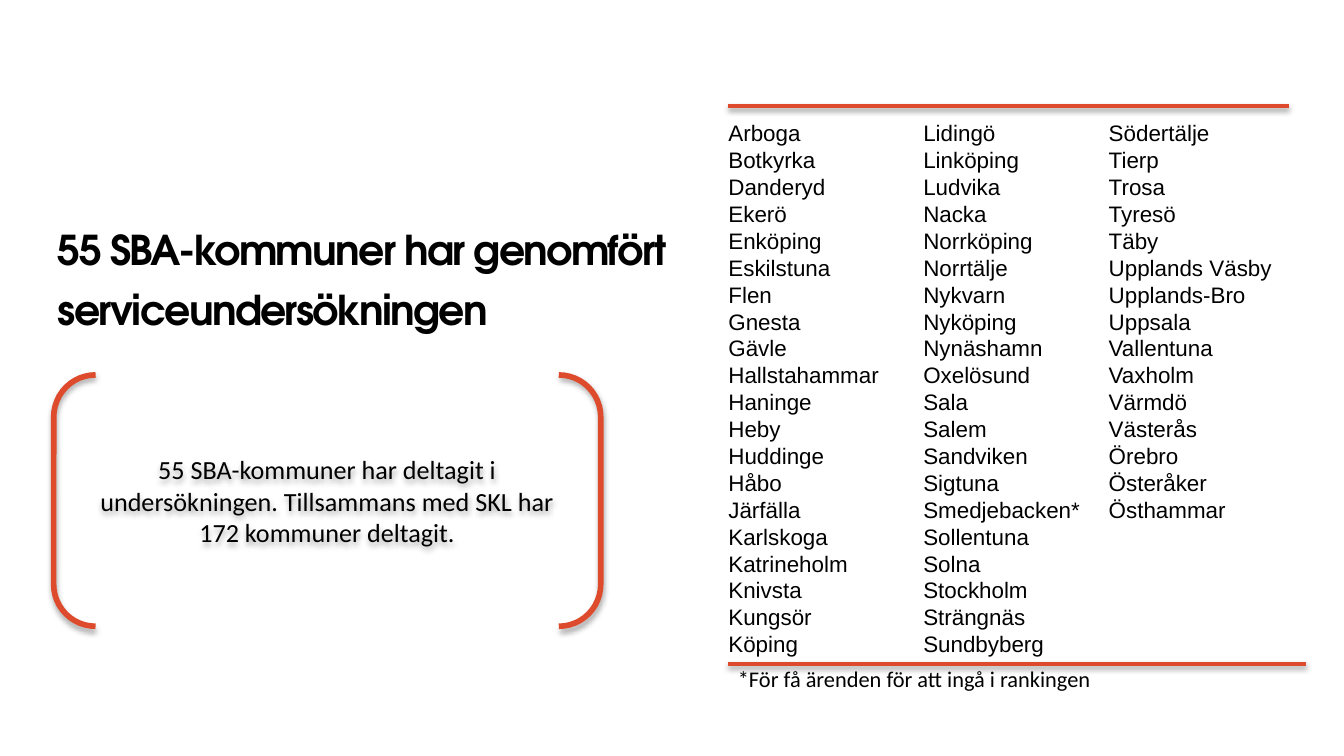
from pptx import Presentation
from pptx.dml.color import RGBColor
from pptx.enum.shapes import MSO_CONNECTOR, MSO_SHAPE
from pptx.enum.text import MSO_ANCHOR, PP_ALIGN
from pptx.oxml import parse_xml
from pptx.oxml.ns import nsdecls
from pptx.util import Inches, Pt

BLACK = "000000"
ORANGE = "DD4A2C"


def style_text(shape, lines, size, font_name, side_margin=0):
    """Fill a shape with one paragraph per line, all in one font."""
    frame = shape.text_frame
    frame.text = "\n".join(lines)
    frame.margin_left = frame.margin_right = Inches(side_margin)
    frame.margin_top = frame.margin_bottom = 0
    for paragraph in frame.paragraphs:
        paragraph.font.size = Pt(size)
        paragraph.font.name = font_name
        paragraph.font.color.rgb = RGBColor.from_string(BLACK)
    return frame


def style_outline(shape, width, distance, opacity):
    """Give a shape an orange outline and a soft shadow straight below."""
    shape.line.color.rgb = RGBColor.from_string(ORANGE)
    shape.line.width = Pt(width)
    shape._element.spPr.append(parse_xml(
        f'<a:effectLst {nsdecls("a")}><a:outerShdw blurRad="{Pt(3.1)}" '
        f'dist="{Pt(distance)}" dir="5400000" rotWithShape="0">'
        f'<a:srgbClr val="{BLACK}"><a:alpha val="{opacity * 1000}"/></a:srgbClr>'
        '</a:outerShdw></a:effectLst>'))


# Widescreen 16:9 page
presentation = Presentation()
presentation.slide_width = Inches(10)
presentation.slide_height = Inches(10 * 9 / 16)
slide = presentation.slides.add_slide(presentation.slide_layouts[6])

# Title
title = slide.shapes.add_textbox(Inches(0.43), Inches(1.59), Inches(4.98), Inches(0.8))
title_frame = style_text(
    title, ["55 SBA-kommuner har genomfört serviceundersökningen"], 22, "TeX Gyre Adventor")
title_frame.word_wrap = True
title_paragraph = title_frame.paragraphs[0]
title_paragraph.line_spacing = Pt(32.1)
title_paragraph.font.bold = True
title_paragraph.runs[0]._r.get_or_add_rPr().set("spc", "-90")

# Municipalities in three columns
columns = [
    (5.42, ["Arboga", "Botkyrka", "Danderyd", "Ekerö", "Enköping", "Eskilstuna", "Flen",
            "Gnesta", "Gävle", "Hallstahammar", "Haninge", "Heby", "Huddinge", "Håbo",
            "Järfälla", "Karlskoga", "Katrineholm", "Knivsta", "Kungsör", "Köping"]),
    (6.87, ["Lidingö", "Linköping", "Ludvika", "Nacka", "Norrköping", "Norrtälje",
            "Nykvarn", "Nyköping", "Nynäshamn", "Oxelösund", "Sala", "Salem", "Sandviken",
            "Sigtuna", "Smedjebacken*", "Sollentuna", "Solna", "Stockholm", "Strängnäs",
            "Sundbyberg"]),
    (8.25, ["Södertälje", "Tierp", "Trosa", "Tyresö", "Täby", "Upplands Väsby",
            "Upplands-Bro", "Uppsala", "Vallentuna", "Vaxholm", "Värmdö", "Västerås",
            "Örebro", "Österåker", "Östhammar"]),
]
for left, names in columns:
    column = slide.shapes.add_textbox(Inches(left), Inches(0.89), Inches(1.6), Inches(3.97))
    style_text(column, names, 12, "Arial").word_wrap = False

# Rules above and below the columns
for right, top in [(9.59, 0.79), (9.72, 4.94)]:
    rule = slide.shapes.add_connector(
        MSO_CONNECTOR.STRAIGHT, Inches(5.42), Inches(top), Inches(right), Inches(top))
    style_outline(rule, 2, 1.6, 38)

# Footnote
footnote = slide.shapes.add_textbox(Inches(5.49), Inches(4.95), Inches(4.29), Inches(0.56))
style_text(footnote, ["*För få ärenden för att ingå i rankingen"], 12, "Calibri").word_wrap = False

# Bracketed summary
bracket = slide.shapes.add_shape(
    MSO_SHAPE.DOUBLE_BRACKET, Inches(0.4), Inches(2.79), Inches(4.07), Inches(1.87))
bracket.fill.background()
style_outline(bracket, 3, 1.8, 35)
summary_frame = style_text(
    bracket, ["55 SBA-kommuner har deltagit i undersökningen. "
              "Tillsammans med SKL har 172 kommuner deltagit."], 14, "Calibri", 0.1)
summary_frame.word_wrap = True
summary_frame.vertical_anchor = MSO_ANCHOR.MIDDLE
summary_frame.paragraphs[0].alignment = PP_ALIGN.CENTER

presentation.save("out.pptx")
